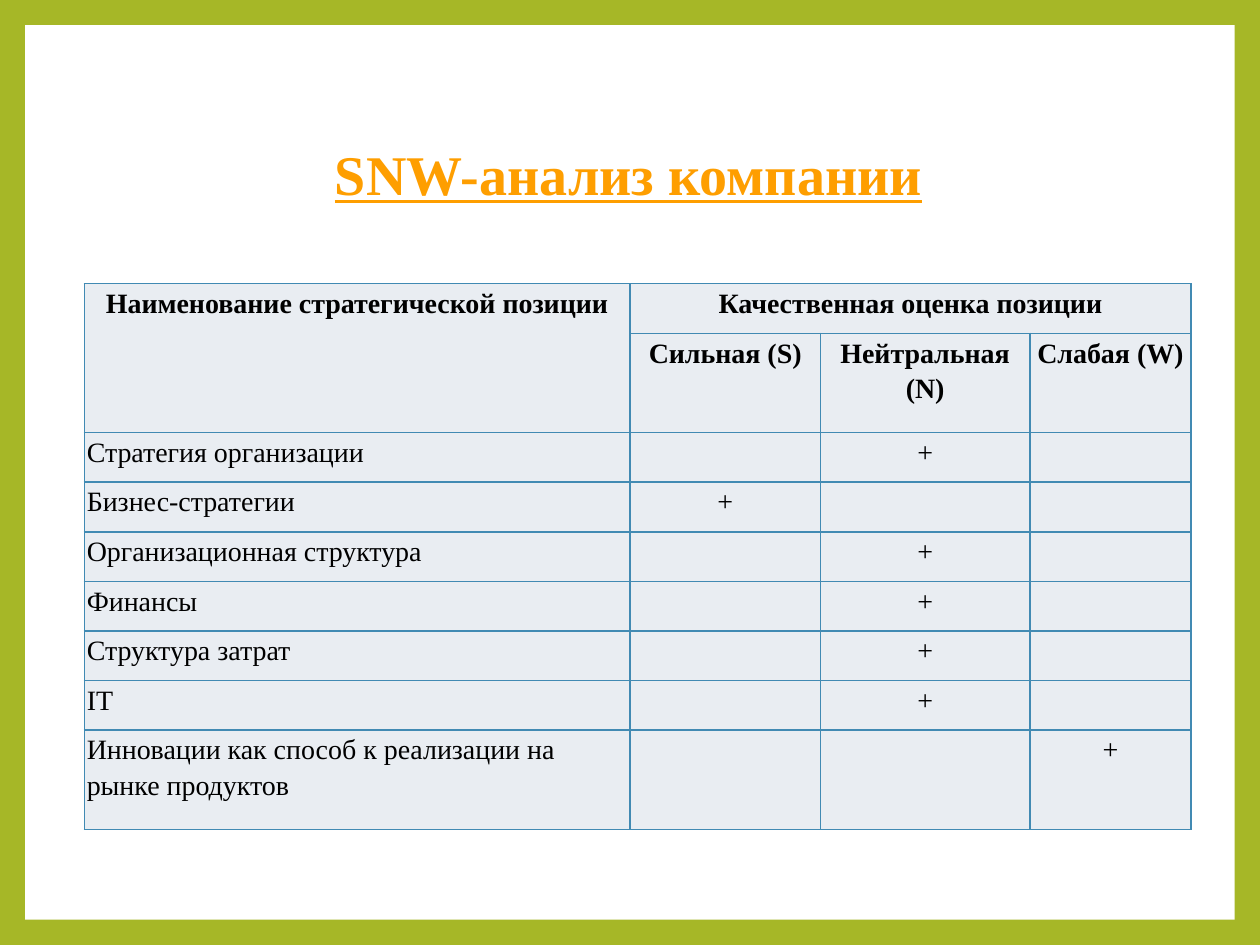
from lxml.etree import SubElement
from pptx import Presentation
from pptx.dml.color import RGBColor
from pptx.enum.shapes import MSO_SHAPE as Shape
from pptx.enum.text import MSO_ANCHOR as Anchor, PP_ALIGN as Align
from pptx.oxml import parse_xml
from pptx.oxml.ns import nsdecls, qn
from pptx.util import Cm, Pt

# Content
TITLE = "SNW-анализ компании"
POSITION_HEADER = "Наименование стратегической позиции"
RATING_HEADER = "Качественная оценка позиции"
RATINGS = ["Сильная (S)", "Нейтральная (N)", "Слабая (W)"]
POSITIONS = [
    ("Стратегия организации", "N"),
    ("Бизнес-стратегии", "S"),
    ("Организационная структура", "N"),
    ("Финансы", "N"),
    ("Структура затрат", "N"),
    ("IT", "N"),
    ("Инновации как способ к реализации на рынке продуктов", "W"),
]

# Style and measures in centimetres
FONT = "Times New Roman"
GREEN, WHITE, ORANGE, BLACK = "A6B727", "FFFFFF", "FE9E00", "000000"
CELL_FILL, BORDER = "E9EDF2", "418AB3"
PAGE_WIDTH, PAGE_HEIGHT, FRAME = 25.4, 19.05, 0.51
TABLE_LEFT, TABLE_TOP = 1.7, 5.72
COLUMNS = [11, 3.84, 4.22, 3.25]
LINE_ROW = 1
ROWS = [LINE_ROW * lines for lines in (1, 2, 1, 1, 1, 1, 1, 1, 2)]
HEADER_ROWS = 2


def color(value):
    return RGBColor.from_string(value)


def write(frame, text, size, ink, bold, align, spacing):
    frame.text = text
    para = frame.paragraphs[0]
    para.alignment, para.line_spacing = align, spacing
    for span in para.runs:
        font = span.font
        font.name, font.size, font.bold = FONT, Pt(size), bold
        font.color.rgb = color(ink)
    return para


def add_borders(cell):
    properties = cell._tc.get_or_add_tcPr()
    for index, side in enumerate(("lnL", "lnR", "lnT", "lnB")):
        line = parse_xml(f'<a:{side} {nsdecls("a")} w="{Pt(1)}"/>')
        fill = SubElement(line, qn("a:solidFill"))
        SubElement(fill, qn("a:srgbClr"), val=BORDER)
        properties.insert(index, line)


deck = Presentation()
deck.slide_width, deck.slide_height = Cm(PAGE_WIDTH), Cm(PAGE_HEIGHT)
page = deck.slides.add_slide(deck.slide_layouts[6])

# Green frame around a white panel
page.background.fill.solid()
page.background.fill.fore_color.rgb = color(GREEN)
panel = page.shapes.add_shape(
    Shape.RECTANGLE, Cm(FRAME), Cm(FRAME),
    Cm(PAGE_WIDTH - 2 * FRAME), Cm(PAGE_HEIGHT - 2 * FRAME))
panel.shadow.inherit = False
panel.fill.solid()
panel.fill.fore_color.rgb = color(WHITE)
panel.line.fill.background()

# Title
title = page.shapes.add_textbox(Cm(2.39), Cm(1.7), Cm(20.57), Cm(3.76))
title.text_frame.word_wrap = True
title.text_frame.vertical_anchor = Anchor.MIDDLE
heading = write(title.text_frame, TITLE, 32, ORANGE, True, Align.CENTER, 0.9)
heading.runs[0].font.underline = True

# Table
grid = [[POSITION_HEADER, RATING_HEADER, "", ""], ["", *RATINGS]]
for name, mark in POSITIONS:
    grid.append([name] + ["+" if mark == key else "" for key in "SNW"])

table = page.shapes.add_table(
    len(ROWS), len(COLUMNS), Cm(TABLE_LEFT), Cm(TABLE_TOP),
    Cm(sum(COLUMNS)), Cm(sum(ROWS))).table
for column, width in zip(table.columns, COLUMNS):
    column.width = Cm(width)
for row, height in zip(table.rows, ROWS):
    row.height = Cm(height)

for row_index, texts in enumerate(grid):
    header = row_index < HEADER_ROWS
    for column_index, text in enumerate(texts):
        cell = table.cell(row_index, column_index)
        cell.margin_left = cell.margin_right = Cm(0.05)
        cell.margin_top = cell.margin_bottom = 0
        cell.fill.solid()
        cell.fill.fore_color.rgb = color(CELL_FILL)
        add_borders(cell)
        if text:
            align = Align.CENTER if header or column_index else Align.LEFT
            write(cell.text_frame, text, 16, BLACK, header, align, 1.15)

table.cell(0, 0).merge(table.cell(1, 0))
table.cell(0, 1).merge(table.cell(0, 3))

deck.save("out.pptx")
